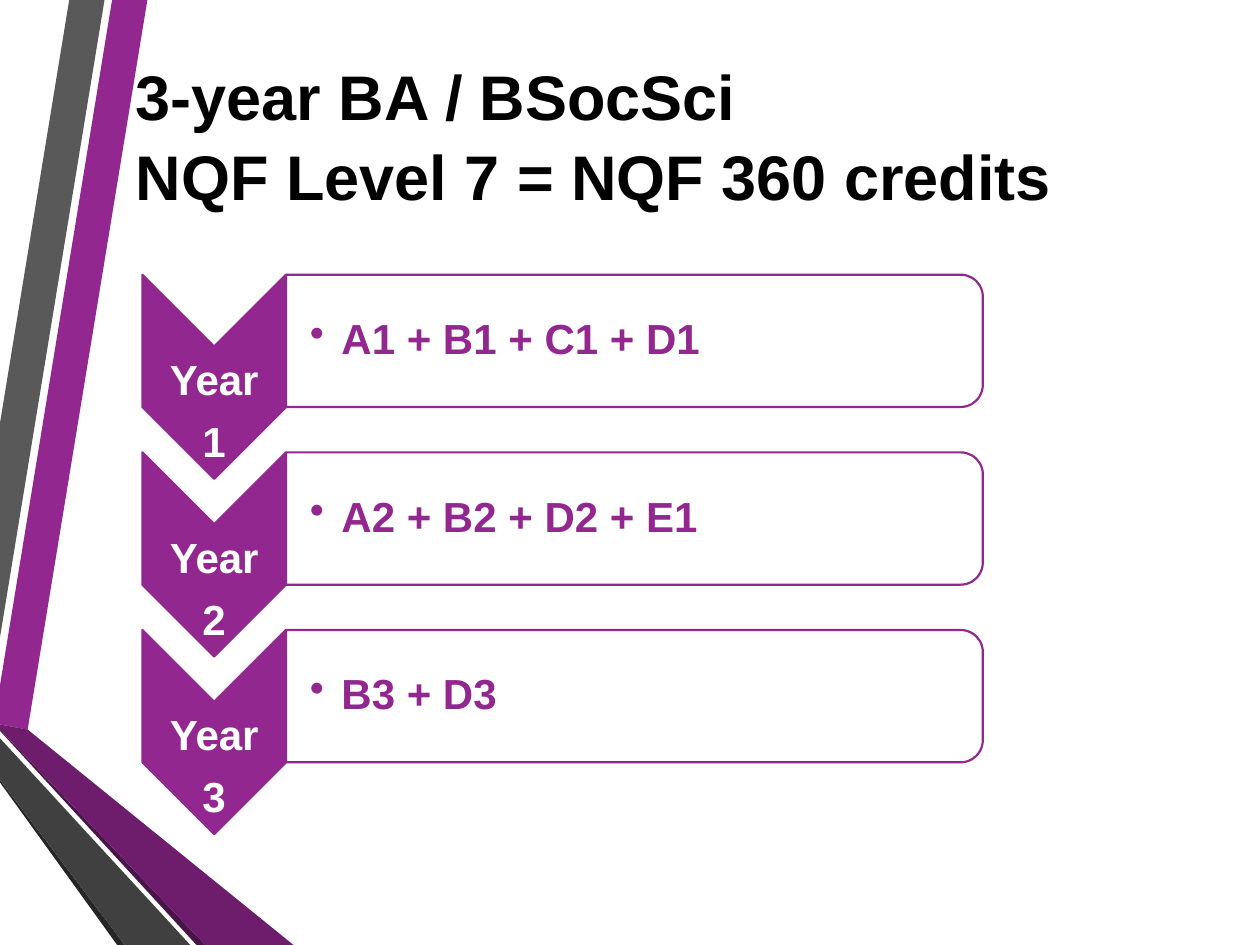
from dataclasses import dataclass

from lxml.etree import SubElement
from pptx import Presentation
from pptx.dml.color import RGBColor
from pptx.enum.shapes import MSO_SHAPE as Shape
from pptx.enum.text import MSO_ANCHOR as Anchor, PP_ALIGN as Align
from pptx.oxml.ns import qn
from pptx.util import Inches, Pt

WIDTH, HEIGHT = 10, 7.5
FONT = "Arial"
COLORS = {
    "purple": "92278F", "plum": "6D1D6B", "dark plum": "491447",
    "grey": "595959", "dark grey": "404040", "charcoal": "262626",
    "white": "FFFFFF", "black": "000000",
}

# Row grid: one row per year, a chevron column and a panel column
ROW_TOP, ROW_PITCH = 2.18, 1.41
CHEVRON_LEFT, CHEVRON_W, CHEVRON_H = 1.13, 1.14, 1.62
PANEL_LEFT, PANEL_W, PANEL_H = CHEVRON_LEFT + CHEVRON_W, 5.53, 1.05


@dataclass
class Band:
    color: str
    points: list[tuple[float, float]]


@dataclass
class Year:
    number: str
    courses: str


BANDS = [
    Band("purple", [(0, 5.44), (0, 5.75), (0.22, 5.79), (1.17, 0), (0.89, 0)]),
    Band("grey", [(0.83, 0), (0.55, 0), (0, 3.36), (0, 5.06)]),
    Band("charcoal", [(0, 6.19), (0, 6.21), (0.93, HEIGHT), (0.99, HEIGHT)]),
    Band("dark plum", [(0, 5.79), (0, 5.8), (1.56, HEIGHT), (1.63, HEIGHT)]),
    Band("plum", [(0, 5.79), (1.63, HEIGHT), (2.33, HEIGHT), (0.22, 5.79), (0, 5.75)]),
    Band("dark grey", [(0, 6.19), (0.99, HEIGHT), (1.51, HEIGHT), (0, 5.86)]),
]
YEARS = [
    Year("1", "A1 + B1 + C1 + D1"),
    Year("2", "A2 + B2 + D2 + E1"),
    Year("3", "B3 + D3"),
]


def rgb(name: str) -> RGBColor:
    return RGBColor.from_string(COLORS[name])


def paint(sp, fill: str, line: str | None = None) -> None:
    sp.shadow.inherit = False
    sp.fill.solid()
    sp.fill.fore_color.rgb = rgb(fill)
    if line:
        sp.line.color.rgb = rgb(line)
        sp.line.width = Pt(1.25)
    else:
        sp.line.fill.background()


def add_band(slide, band: Band) -> None:
    start, *rest = [(Inches(x), Inches(y)) for x, y in band.points]
    builder = slide.shapes.build_freeform(*start)
    builder.add_line_segments(rest, close=True)
    paint(builder.convert_to_shape(), band.color)


def add_turned(slide, kind, left: float, top: float, w: float, h: float, fill: str):
    """Add a shape turned by 90 degrees that covers the given box."""
    shift = (w - h) / 2
    sp = slide.shapes.add_shape(
        kind, Inches(left + shift), Inches(top - shift), Inches(h), Inches(w))
    sp.rotation = 90
    paint(sp, fill, "purple")
    return sp


def add_text(slide, box: tuple, lines: list[str], size: int, color: str,
             anchor, insets: tuple, spacing: float, after: float = 0,
             align=Align.LEFT, bullet: bool = False) -> None:
    tf = slide.shapes.add_textbox(*map(Inches, box)).text_frame
    tf.word_wrap = True
    tf.vertical_anchor = anchor
    tf.margin_left, tf.margin_top, tf.margin_right, tf.margin_bottom = map(Inches, insets)
    tf.text = "\n".join(lines)
    for p in tf.paragraphs:
        p.alignment = align
        p.line_spacing = spacing
        p.space_after = Pt(after)
        if bullet:
            pPr = p._p.get_or_add_pPr()
            pPr.set("marL", str(Inches(0.25)))
            pPr.set("indent", str(-Inches(0.25)))
            SubElement(pPr, qn("a:buChar"), char="•")
        for r in p.runs:
            r.font.name, r.font.size, r.font.bold = FONT, Pt(size), True
            r.font.color.rgb = rgb(color)


def add_year(slide, row: int, year: Year) -> None:
    top = ROW_TOP + row * ROW_PITCH
    add_turned(slide, Shape.CHEVRON, CHEVRON_LEFT, top, CHEVRON_W, CHEVRON_H, "purple")
    add_text(slide, (CHEVRON_LEFT, top + 0.65, CHEVRON_W, 0.95),
             ["Year", year.number], 24, "white", Anchor.TOP, (0.02,) * 4,
             0.9, after=9.5, align=Align.CENTER)
    panel = add_turned(slide, Shape.ROUND_2_SAME_RECTANGLE,
                       PANEL_LEFT, top, PANEL_W, PANEL_H, "white")
    color = panel.fill._xPr.find(".//" + qn("a:srgbClr"))
    SubElement(color, qn("a:alpha"), val="90000")
    add_text(slide, (PANEL_LEFT, top + 0.05, PANEL_W - 0.05, PANEL_H - 0.1),
             [year.courses], 24, "purple", Anchor.MIDDLE,
             (0.19, 0.02, 0.02, 0.02), 0.9, bullet=True)


def main() -> None:
    prs = Presentation()
    prs.slide_width, prs.slide_height = Inches(WIDTH), Inches(HEIGHT)
    slide = prs.slides.add_slide(prs.slide_layouts[6])

    # Slanted bands along the left edge
    for band in BANDS:
        add_band(slide, band)

    # Title
    add_text(slide, (0.98, 0.36, 8.39, 1.4),
             ["3-year BA / BSocSci", "NQF Level 7 = NQF 360 credits"],
             36, "black", Anchor.MIDDLE, (0.1, 0.05, 0.1, 0.05), 1.05)

    # Year rows
    for row, year in enumerate(YEARS):
        add_year(slide, row, year)

    prs.save("out.pptx")


if __name__ == "__main__":
    main()
